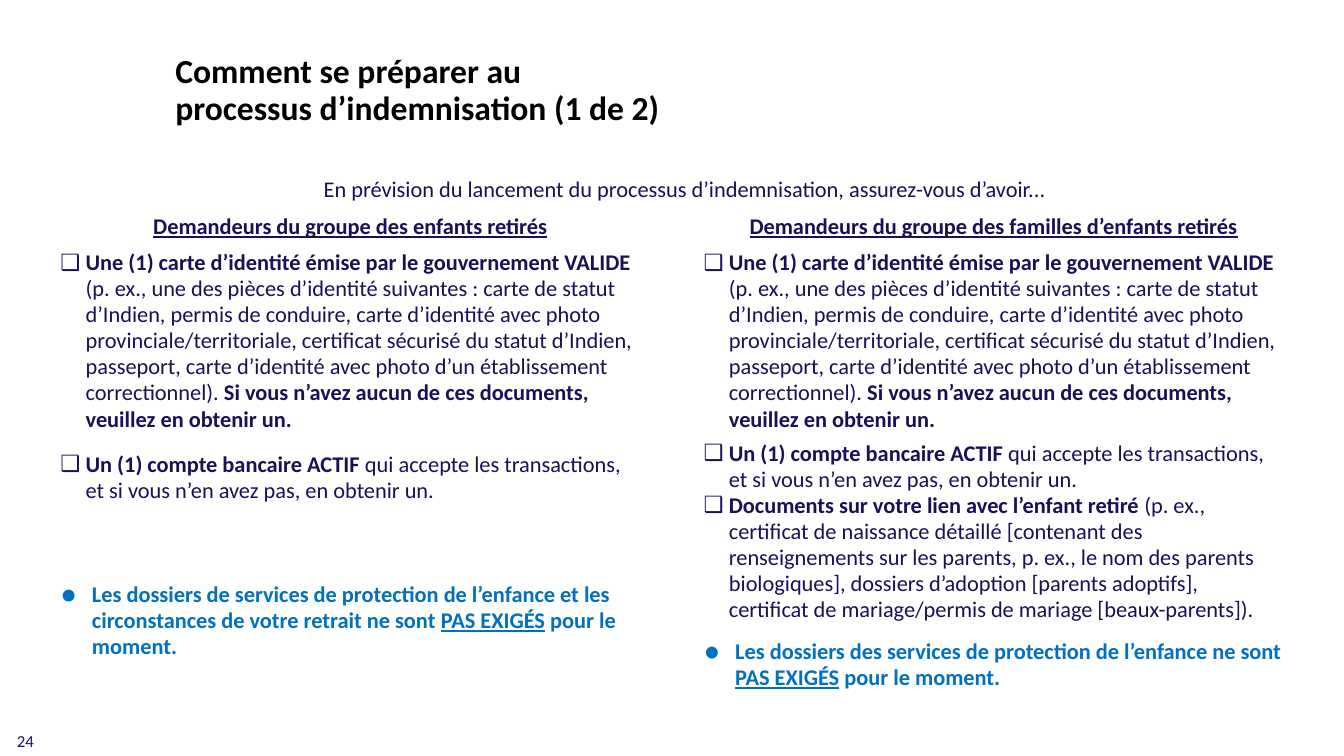
from dataclasses import dataclass

from lxml import etree
from pptx import Presentation
from pptx.dml.color import RGBColor
from pptx.enum.text import MSO_ANCHOR, MSO_AUTO_SIZE, PP_ALIGN
from pptx.oxml.ns import qn
from pptx.util import Pt

LEFT, CENTER = PP_ALIGN.LEFT, PP_ALIGN.CENTER
TOP, MIDDLE, BOTTOM = MSO_ANCHOR.TOP, MSO_ANCHOR.MIDDLE, MSO_ANCHOR.BOTTOM


@dataclass(frozen=True)
class Theme:
    font: str = "Calibri"
    black: RGBColor = RGBColor(0, 0, 0)
    navy: RGBColor = RGBColor(0x1B, 0x0F, 0x59)
    blue: RGBColor = RGBColor(0x00, 0x70, 0xC0)
    title_size: int = 24
    body_size: int = 16
    number_size: int = 12


THEME = Theme()
BOLD = {"bold": True}
HEADING = {"bold": True, "underline": True}
NOTE = {"bold": True, "color": THEME.blue}
NOTE_STRESSED = {**NOTE, "underline": True}

IDENTITY_CARD = [
    ("Une (1)\u00a0carte d’identité émise par le gouvernement VALIDE ", BOLD),
    ("(p. ex., une des pièces d’identité suivantes\u00a0: carte de statut d’Indien, "
     "permis de conduire, carte d’identité avec photo provinciale/territoriale, "
     "certificat sécurisé du statut d’Indien, passeport, carte d’identité avec photo "
     "d’un établissement correctionnel). ", {}),
    ("Si vous n’avez aucun de ces documents, veuillez en obtenir un.", BOLD),
]
BANK_ACCOUNT = [
    ("Un (1) compte bancaire ACTIF ", BOLD),
    ("qui accepte les transactions, et si vous n’en avez pas, en obtenir un.", {}),
]
FAMILY_LINK = [
    ("Documents sur votre lien avec l’enfant retiré ", BOLD),
    ("(p. ex., certificat de naissance détaillé [contenant des renseignements sur les "
     "parents, p. ex., le nom des parents biologiques], dossiers d’adoption [parents "
     "adoptifs], certificat de mariage/permis de mariage [beaux-parents]).", {}),
]


def records_note(start):
    return [(start, NOTE), ("PAS EXIGÉS", NOTE_STRESSED), (" pour le moment.", NOTE)]


# Each group: heading, checklist of (runs, space before), note and its space before
GROUPS = [
    ("Demandeurs du groupe des enfants retirés",
     [(IDENTITY_CARD, 0), (BANK_ACCOUNT, 14)],
     (records_note("Les dossiers de services de protection de l’enfance et les "
                   "circonstances de votre retrait ne sont "), 55.5)),
    ("Demandeurs du groupe des familles d’enfants retirés",
     [(IDENTITY_CARD, 0), (BANK_ACCOUNT, 6), (FAMILY_LINK, 0)],
     (records_note("Les dossiers des services de protection de l’enfance ne sont "), 11.5)),
]


def add_run(paragraph, text, size=THEME.body_size, color=THEME.navy, bold=False, underline=False):
    run = paragraph.add_run()
    run.text = text
    font = run.font
    font.name, font.size, font.color.rgb = THEME.font, Pt(size), color
    font.bold, font.underline = bold, underline


def write_paragraph(paragraph, runs, align=LEFT, line_spacing=0.95, before=0, after=0):
    paragraph.alignment = align
    paragraph.line_spacing = line_spacing
    paragraph.space_before, paragraph.space_after = Pt(before), Pt(after)
    for text, style in runs:
        add_run(paragraph, text, **style)


def set_bullet(paragraph, character, indent, percent=100):
    properties = paragraph._p.get_or_add_pPr()
    properties.set("marL", str(Pt(indent)))
    properties.set("indent", str(-Pt(indent)))
    etree.SubElement(properties, qn("a:buSzPct")).set("val", str(percent * 1000))
    etree.SubElement(properties, qn("a:buFont")).set("typeface", THEME.font)
    etree.SubElement(properties, qn("a:buChar")).set("char", character)


def fill_text_shape(shape, box, text, anchor, line_spacing=1.0, **style):
    shape.left, shape.top, shape.width, shape.height = map(Pt, box)
    frame = shape.text_frame
    frame.word_wrap = True
    frame.auto_size = MSO_AUTO_SIZE.NONE
    frame.vertical_anchor = anchor
    write_paragraph(frame.paragraphs[0], [(text, style)], line_spacing=line_spacing)


def fill_group(heading_cell, list_cell, heading, checklist, note):
    """Write one group of claimants into its two table cells."""
    heading_cell.vertical_anchor = MIDDLE
    write_paragraph(heading_cell.text_frame.paragraphs[0], [(heading, HEADING)], align=CENTER)
    frame = list_cell.text_frame
    items = [(*item, ("❑", 18)) for item in checklist] + [(*note, ("•", 22.5, 150))]
    for index, (runs, before, bullet) in enumerate(items):
        paragraph = frame.add_paragraph() if index else frame.paragraphs[0]
        set_bullet(paragraph, *bullet)
        write_paragraph(paragraph, runs, before=before)


def add_groups_table(slide, box, gutter, heading_height):
    left, top, width, height = box
    column_width = (width - gutter) / 2
    table = slide.shapes.add_table(2, 3, Pt(left), Pt(top), Pt(width), Pt(height)).table
    table.first_row = table.horz_banding = False
    for column, size in zip(table.columns, (column_width, gutter, column_width)):
        column.width = Pt(size)
    for row, size in zip(table.rows, (heading_height, height - heading_height)):
        row.height = Pt(size)
    for cell in table.iter_cells():
        cell.fill.background()
    for row in range(2):
        spacer = table.cell(row, 1)
        spacer.margin_top = spacer.margin_bottom = 0
    for column, group in zip((0, 2), GROUPS):
        fill_group(table.cell(0, column), table.cell(1, column), *group)


def add_preparation_slide(presentation):
    slide = presentation.slides.add_slide(presentation.slide_layouts[0])
    fill_text_shape(slide.shapes.title, (118, 11.5, 361.5, 83),
                    "Comment se préparer au processus d’indemnisation (1 de 2)", BOTTOM,
                    line_spacing=0.9, size=THEME.title_size, color=THEME.black, bold=True)
    fill_text_shape(slide.placeholders[1], (224, 124, 533.5, 20),
                    "En prévision du lancement du processus d’indemnisation, "
                    "assurez-vous d’avoir...", TOP, line_spacing=0.9)
    add_groups_table(slide, (36, 149, 888, 335), gutter=31, heading_height=26)
    number = slide.shapes.add_textbox(0, 0, 0, 0)
    fill_text_shape(number, (5, 518.5, 216, 21.5), "24", MIDDLE, size=THEME.number_size)


def main():
    presentation = Presentation()
    presentation.slide_width, presentation.slide_height = Pt(960), Pt(540)
    add_preparation_slide(presentation)
    presentation.save("out.pptx")


if __name__ == "__main__":
    main()
